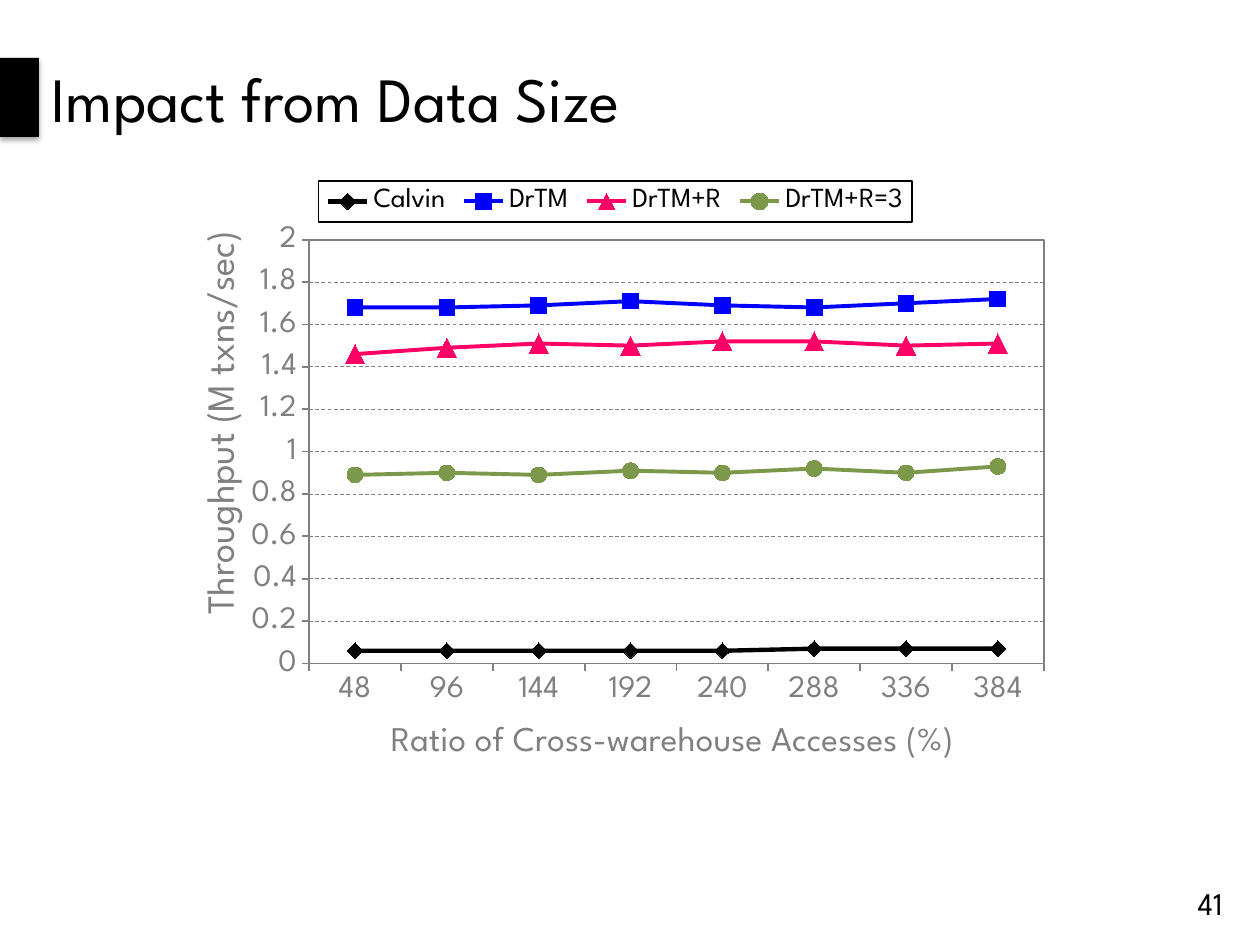
import lxml.etree
import pptx
import pptx.chart.data
import pptx.dml.color
import pptx.enum.chart
import pptx.enum.dml
import pptx.enum.shapes
import pptx.enum.text
import pptx.oxml
import pptx.oxml.ns
import pptx.util

BLACK = pptx.dml.color.RGBColor(0x00, 0x00, 0x00)
GRAY = pptx.dml.color.RGBColor(0x80, 0x80, 0x80)
BLUE = pptx.dml.color.RGBColor(0x00, 0x00, 0xFF)
PINK = pptx.dml.color.RGBColor(0xFF, 0x00, 0x66)
GREEN = pptx.dml.color.RGBColor(0x7C, 0x98, 0x4A)
FONT = "League Spartan"

WAREHOUSES = range(48, 385, 48)
MARKER = pptx.enum.chart.XL_MARKER_STYLE
# name, colour, line width, marker, marker size, values
SERIES = [
    ("Calvin", BLACK, 2.5, MARKER.DIAMOND, 9,
     [0.06, 0.06, 0.06, 0.06, 0.06, 0.07, 0.07, 0.07]),
    ("DrTM", BLUE, 2.25, MARKER.SQUARE, 9,
     [1.68, 1.68, 1.69, 1.71, 1.69, 1.68, 1.7, 1.72]),
    ("DrTM+R", PINK, 2.25, MARKER.TRIANGLE, 11,
     [1.46, 1.49, 1.51, 1.5, 1.52, 1.52, 1.5, 1.51]),
    ("DrTM+R=3", GREEN, 2.25, MARKER.CIRCLE, 9,
     [0.89, 0.9, 0.89, 0.91, 0.9, 0.92, 0.9, 0.93]),
]


def px(length):
    return pptx.util.Emu(round(length * 914400 / 126))


def set_layout(element, index, x, y, width=None, height=None, inner=False):
    """Place a chart part by fractions of the chart; index is its child slot."""
    for layout in element.findall(pptx.oxml.ns.qn("c:layout")):
        element.remove(layout)
    values = [("xMode", "edge"), ("yMode", "edge"), ("x", x), ("y", y)]
    if inner:
        values.insert(0, ("layoutTarget", "inner"))
    if width:
        values += [("w", width), ("h", height)]
    body = "".join(f'<c:{tag} val="{value}"/>' for tag, value in values)
    element.insert(index, pptx.oxml.parse_xml(
        f'<c:layout {pptx.oxml.ns.nsdecls("c")}>'
        f'<c:manualLayout>{body}</c:manualLayout></c:layout>'))


def outline(color, points):
    """Shape properties of a chart part with a border and no fill."""
    return pptx.oxml.parse_xml(
        f'<c:spPr {pptx.oxml.ns.nsdecls("c", "a")}><a:noFill/>'
        f'<a:ln w="{int(pptx.util.Pt(points))}"><a:solidFill>'
        f'<a:srgbClr val="{color}"/></a:solidFill></a:ln></c:spPr>')


class SlideBuilder:
    def __init__(self, deck):
        self.slide = deck.slides.add_slide(deck.slide_layouts[5])

    def style(self, font, size, color=BLACK):
        font.name = FONT
        font.size = pptx.util.Pt(size)
        font.bold = False
        font.color.rgb = color

    def text(self, box, text, size, align):
        frame = box.text_frame
        frame.text = text
        frame.vertical_anchor = pptx.enum.text.MSO_ANCHOR.MIDDLE
        para = frame.paragraphs[0]
        para.alignment = align
        self.style(para.runs[0].font, size)

    def title(self, text, left, top, width, height):
        title = self.slide.shapes.title
        title.left, title.top = px(left), px(top)
        title.width, title.height = px(width), px(height)
        self.text(title, text, 36, pptx.enum.text.PP_ALIGN.LEFT)

    def number(self, text, left, top, width, height):
        box = self.slide.shapes.add_textbox(px(left), px(top), px(width), px(height))
        self.text(box, text, 18, pptx.enum.text.PP_ALIGN.RIGHT)
        box.text_frame.word_wrap = False

    def accent_bar(self, left, top, width, height):
        bar = self.slide.shapes.add_shape(
            pptx.enum.shapes.MSO_SHAPE.RECTANGLE, px(left), px(top), px(width), px(height))
        bar.fill.solid()
        bar.fill.fore_color.rgb = BLACK
        bar.line.fill.background()
        bar.shadow.inherit = False
        effects = bar.element.find(".//" + pptx.oxml.ns.qn("a:effectLst"))
        effects.append(pptx.oxml.parse_xml(
            f'<a:outerShdw {pptx.oxml.ns.nsdecls("a")} blurRad="40000" dist="23000" '
            'dir="5400000" rotWithShape="0"><a:srgbClr val="000000">'
            '<a:alpha val="35000"/></a:srgbClr></a:outerShdw>'))

    def axis(self, axis, title, size, x, y):
        axis.major_tick_mark = pptx.enum.chart.XL_TICK_MARK.OUTSIDE
        axis.minor_tick_mark = pptx.enum.chart.XL_TICK_MARK.NONE
        self.style(axis.tick_labels.font, 18, GRAY)
        axis.format.line.color.rgb = GRAY
        axis.format.line.width = pptx.util.Pt(1)
        frame = axis.axis_title.text_frame
        frame.text = title
        self.style(frame.paragraphs[0].runs[0].font, size, GRAY)
        set_layout(axis.axis_title.element if hasattr(axis.axis_title, "element")
                   else axis.axis_title._element, 1, x, y)

    def line_chart(self, left, top, width, height):
        data = pptx.chart.data.CategoryChartData()
        data.categories = list(WAREHOUSES)
        for name, *_, values in SERIES:
            data.add_series(name, values)
        chart = self.slide.shapes.add_chart(
            pptx.enum.chart.XL_CHART_TYPE.LINE_MARKERS,
            px(left), px(top), px(width), px(height), data).chart
        self.style(chart.font, 18)
        chart.has_title = False
        chart.plots[0].vary_by_categories = False

        for series, (_, color, points, marker, size, _) in zip(chart.plots[0].series, SERIES):
            series.smooth = False
            series.format.line.color.rgb = color
            series.format.line.width = pptx.util.Pt(points)
            series.marker.style = marker
            series.marker.size = size
            series.marker.format.fill.solid()
            series.marker.format.fill.fore_color.rgb = color
            series.marker.format.line.color.rgb = color

        self.axis(chart.category_axis, "Ratio of Cross-warehouse Accesses (%)", 20, 0.25, 0.92)
        value_axis = chart.value_axis
        self.axis(value_axis, "Throughput (M txns/sec)", 22, 0.05, 0.09)
        value_axis.minimum_scale, value_axis.maximum_scale = 0, 2
        value_axis.major_unit = 0.2
        value_axis.tick_labels.number_format = "General"
        value_axis.tick_labels.number_format_is_linked = False
        grid = value_axis.major_gridlines.format.line
        grid.color.rgb = GRAY
        grid.width = pptx.util.Pt(0.5)
        grid.dash_style = pptx.enum.dml.MSO_LINE.DASH

        chart.has_legend = True
        chart.legend.position = pptx.enum.chart.XL_LEGEND_POSITION.TOP
        chart.legend.include_in_layout = False
        self.style(chart.legend.font, 16)
        legend = chart.element.find(".//" + pptx.oxml.ns.qn("c:legend"))
        set_layout(legend, 1, 0.18, 0.01, 0.63, 0.07)
        legend.find(pptx.oxml.ns.qn("c:overlay")).addnext(outline(BLACK, 1))
        plot_area = chart.element.find(".//" + pptx.oxml.ns.qn("c:plotArea"))
        set_layout(plot_area, 0, 0.17, 0.11, 0.78, 0.72, inner=True)
        plot_area.append(outline(GRAY, 1))


def main():
    deck = pptx.Presentation()
    deck.slide_width, deck.slide_height = px(1260), px(945)
    builder = SlideBuilder(deck)
    builder.title("Impact from Data Size", 39, 0, 1221, 195)
    builder.accent_bar(0, 58, 39, 79)
    builder.number("41", 1176, 878, 59, 50)
    builder.line_chart(149, 175, 942, 595)
    deck.save("out.pptx")


if __name__ == "__main__":
    main()
